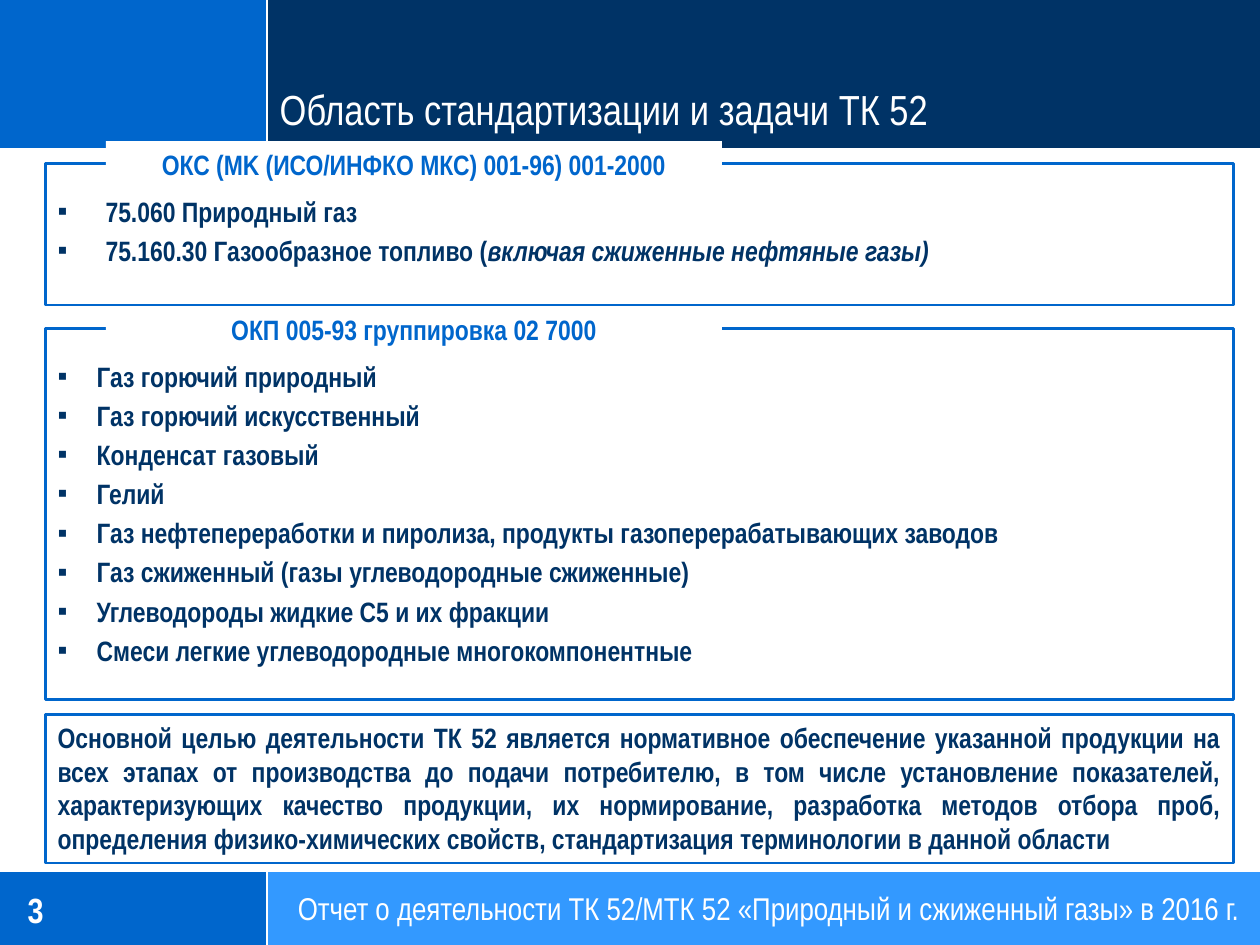
from pptx import Presentation
from pptx.dml.color import RGBColor
from pptx.enum.shapes import MSO_CONNECTOR, MSO_SHAPE
from pptx.enum.text import MSO_ANCHOR, PP_ALIGN
from pptx.oxml.ns import qn
from pptx.util import Inches, Pt
from lxml import etree

COLS, ROWS = 100, 75
WHITE, BLUE, NAVY, SKY = "FFFFFF", "0066CC", "003366", "3399FF"


def rgb(value):
    return RGBColor.from_string(value)


def write(paragraph, text, size=16, color=NAVY, bold=True, italic=False):
    run = paragraph.add_run()
    run.text = text
    font = run.font
    font.name, font.size = "Arial Narrow", Pt(size)
    font.bold, font.italic = bold, italic
    font.color.rgb = rgb(color)


class SlideStyle:
    """Draws on one slide; lengths are columns and rows of a 100 x 75 grid."""

    def __init__(self, deck):
        self.slide = deck.slides.add_slide(deck.slide_layouts[6])
        self.col = deck.slide_width / COLS
        self.row = deck.slide_height / ROWS

    def place(self, left, top, width, height):
        return (round(left * self.col), round(top * self.row),
                round(width * self.col), round(height * self.row))

    def block(self, area, fill=None, line=None):
        shape = self.slide.shapes.add_shape(MSO_SHAPE.RECTANGLE, *self.place(*area))
        shape.shadow.inherit = False
        if fill:
            shape.fill.solid()
            shape.fill.fore_color.rgb = rgb(fill)
        else:
            shape.fill.background()
        if line:
            shape.line.color.rgb = rgb(line)
            shape.line.width = Pt(1.5)
        else:
            shape.line.fill.background()
        shape.text_frame.word_wrap = True
        shape.text_frame.vertical_anchor = MSO_ANCHOR.TOP
        return shape.text_frame

    def rule(self, x1, y1, x2, y2):
        start_x, start_y, end_x, end_y = self.place(x1, y1, x2, y2)
        line = self.slide.shapes.add_connector(
            MSO_CONNECTOR.STRAIGHT, start_x, start_y, end_x, end_y)
        line.line.color.rgb = rgb(WHITE)
        line.line.width = Pt(1.25)
        etree.SubElement(line._element.spPr, qn("a:effectLst"))

    def text(self, area, words, anchor=MSO_ANCHOR.MIDDLE, align=PP_ALIGN.LEFT, **style):
        frame = self.slide.shapes.add_textbox(*self.place(*area)).text_frame
        frame.word_wrap = True
        frame.vertical_anchor = anchor
        frame.margin_left = frame.margin_right = 0
        frame.margin_top = frame.margin_bottom = 0
        frame.paragraphs[0].alignment = align
        write(frame.paragraphs[0], words, color=WHITE, **style)

    def paragraph_block(self, area, words, align, **look):
        paragraph = self.block(area, **look).paragraphs[0]
        paragraph.alignment = align
        return write(paragraph, words, color=NAVY if look.get("line") else BLUE)

    def group(self, top, height, heading, items, indent):
        """Framed bullet list with its heading set into the top border."""
        frame = self.block((3.6, top, 94.3, height), fill=WHITE, line=BLUE)
        frame.margin_top = Inches(0.24)
        for index, parts in enumerate(items):
            paragraph = frame.add_paragraph() if index else frame.paragraphs[0]
            paragraph.alignment = PP_ALIGN.LEFT
            if index:
                paragraph.space_before = Pt(3.2)
            props = paragraph._p.get_or_add_pPr()
            props.set("marL", str(Inches(indent)))
            props.set("indent", str(-Inches(indent)))
            etree.SubElement(props, qn("a:buFont"), typeface="Arial")
            etree.SubElement(props, qn("a:buChar"), char="▪")
            for position, part in enumerate(parts):
                write(paragraph, part, italic=position > 0)
        self.paragraph_block((8.4, top - 1.8, 48.9, 3.7), heading,
                             PP_ALIGN.CENTER, fill=WHITE)


def main():
    deck = Presentation()
    deck.slide_width, deck.slide_height = Inches(10), Inches(7.5)
    page = SlideStyle(deck)

    # Header and footer bands
    split, header, footer = 21.2, 11.8, 69.1
    for top, height, band in ((footer, ROWS - footer, SKY), (0, header, NAVY)):
        page.block((0, top, split, height), fill=BLUE)
        page.block((split, top, COLS - split, height), fill=band)
        page.rule(split, top, split, top + height)
    for edge in (footer, header):
        page.rule(0, edge, COLS, edge)

    # Title, page number and report name
    page.text((22.2, 5.6, 77.8, 5), "Область стандартизации и задачи ТК 52",
              anchor=MSO_ANCHOR.BOTTOM, size=24, bold=False)
    page.text((2.2, 69.6, 16.3, 5.2), "3", size=20)
    page.text((22, footer, 78, ROWS - footer),
              "Отчет о деятельности ТК 52/МТК 52 «Природный и сжиженный газы» в 2016 г.",
              align=PP_ALIGN.CENTER, size=18, bold=False)

    # Classifier groups; the second part of an item is italic
    page.group(13, 11.2, "ОКС (MK (ИСО/ИНФКО МКС) 001-96) 001-2000", [
        ["75.060 Природный газ"],
        ["75.160.30 Газообразное топливо (", "включая сжиженные нефтяные газы)"],
    ], indent=0.38)
    page.group(26.1, 29.4, "ОКП 005-93 группировка 02 7000", [
        ["Газ горючий природный"],
        ["Газ горючий искусственный"],
        ["Конденсат газовый"],
        ["Гелий"],
        ["Газ нефтепереработки и пиролиза, продукты газоперерабатывающих заводов"],
        ["Газ сжиженный (газы углеводородные сжиженные)"],
        ["Углеводороды жидкие С5 и их фракции"],
        ["Смеси легкие углеводородные многокомпонентные"],
    ], indent=0.31)

    # Main goal
    page.paragraph_block(
        (3.6, 56.7, 94.3, 11.8),
        "Основной целью деятельности ТК 52 является нормативное обеспечение "
        "указанной продукции на всех этапах от производства до подачи потребителю, "
        "в том числе установление показателей, характеризующих качество продукции, "
        "их нормирование, разработка методов отбора проб, определения "
        "физико-химических свойств, стандартизация терминологии в данной области",
        PP_ALIGN.JUSTIFY, line=BLUE)

    deck.save("out.pptx")


if __name__ == "__main__":
    main()
